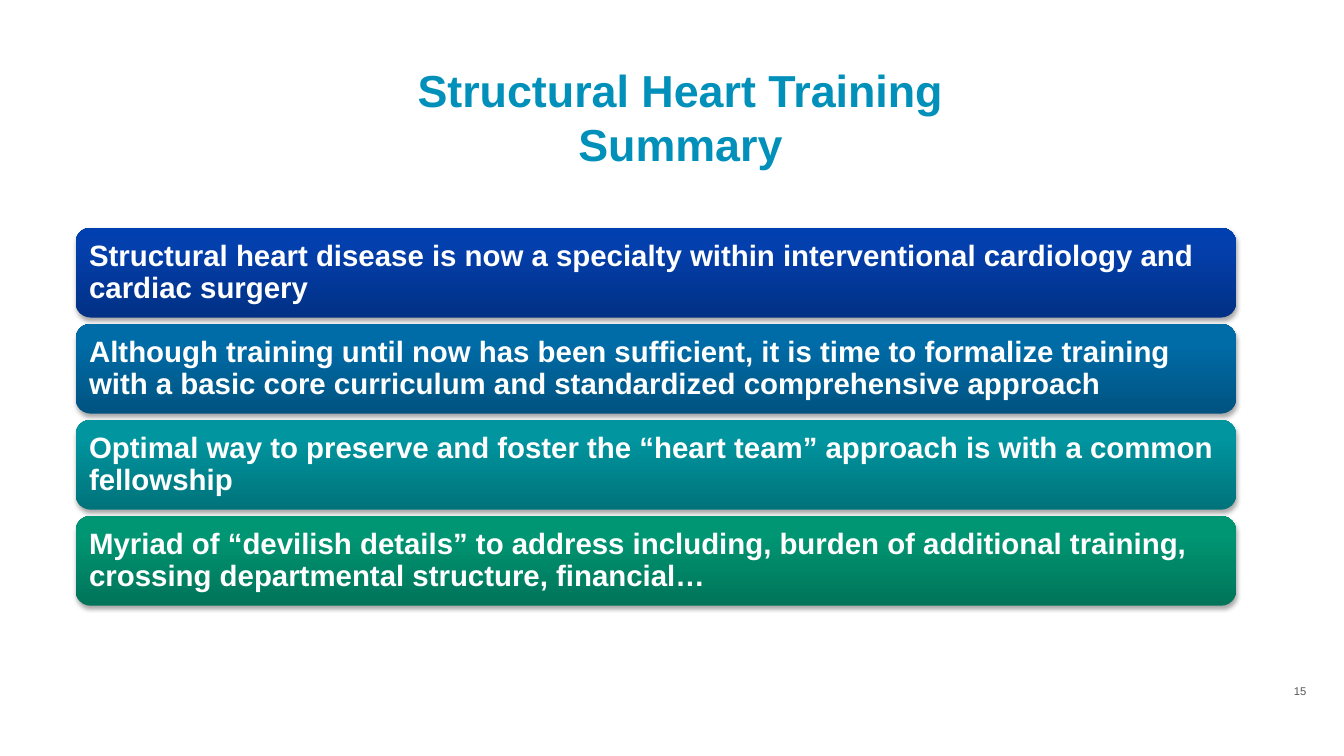
from copy import deepcopy
from dataclasses import dataclass

from lxml.etree import SubElement
from pptx import Presentation
from pptx.dml.color import RGBColor
from pptx.enum.shapes import MSO_SHAPE
from pptx.enum.text import MSO_ANCHOR, PP_ALIGN
from pptx.oxml.ns import qn
from pptx.util import Inches, Pt

TITLE = "Structural Heart Training\vSummary"
PAGE_NUMBER = "15"
POINTS = [
    ("Structural heart disease is now a specialty within interventional "
     "cardiology and cardiac surgery", ("023185", "033FAD", "003FB0")),
    ("Although training until now has been sufficient, it is time to formalize "
     "training with a basic core curriculum and standardized comprehensive "
     "approach", ("005381", "006CA7", "006DA8")),
    ("Optimal way to preserve and foster the “heart team” approach is with a "
     "common fellowship", ("00737A", "00959F", "00969F")),
    ("Myriad of “devilish details” to address including, burden of additional "
     "training, crossing departmental structure, financial…",
     ("007459", "009673", "009774")),
]


@dataclass(frozen=True)
class Theme:
    font: str = "Arial"
    title: str = "0090BA"
    bar_text: str = "FFFFFF"
    number: str = "555555"
    shadow: str = "000000"
    title_size: float = 32
    bar_size: float = 21
    number_size: float = 8
    stops: tuple = (0, 0.8, 1)


THEME = Theme()
BAR_LEFT, BAR_TOP, BAR_WIDTH, BAR_HEIGHT = 0.75, 2.26, 11.51, 0.89
BAR_PITCH = 0.953


def write(sp, text, size, color, align, anchor, insets, bold=True):
    tf = sp.text_frame
    tf.word_wrap = True
    tf.vertical_anchor = anchor
    side, edge = insets
    tf.margin_left = tf.margin_right = Inches(side)
    tf.margin_top = tf.margin_bottom = Inches(edge)
    p = tf.paragraphs[0]
    p.text = text
    p.alignment = align
    p.font.name = THEME.font
    p.font.size = Pt(size)
    p.font.bold = bold
    p.font.color.rgb = RGBColor.from_string(color)
    return p


def shade(sp, colors):
    fill = sp.fill
    fill.gradient()
    fill.gradient_angle = 90
    gs_list = sp._element.spPr.find(qn("a:gradFill")).find(qn("a:gsLst"))
    gs_list.append(deepcopy(gs_list[-1]))
    for stop, position, color in zip(fill.gradient_stops, THEME.stops, colors):
        stop.position = position
        stop.color.rgb = RGBColor.from_string(color)


def drop_shadow(sp):
    sp.shadow.inherit = False
    effects = sp._element.spPr.find(qn("a:effectLst"))
    shadow = SubElement(effects, qn("a:outerShdw"), blurRad=str(Pt(3.1)),
                        dist=str(Pt(1.8)), dir="5400000", rotWithShape="0")
    color = SubElement(shadow, qn("a:srgbClr"), val=THEME.shadow)
    SubElement(color, qn("a:alpha"), val="35000")


def add_bar(slide, index, text, colors):
    sp = slide.shapes.add_shape(
        MSO_SHAPE.ROUNDED_RECTANGLE, Inches(BAR_LEFT),
        Inches(BAR_TOP + index * BAR_PITCH), Inches(BAR_WIDTH), Inches(BAR_HEIGHT))
    shade(sp, colors)
    sp.line.fill.background()
    drop_shadow(sp)
    p = write(sp, text, THEME.bar_size, THEME.bar_text, PP_ALIGN.LEFT,
              MSO_ANCHOR.MIDDLE, (0.09, 0.09))
    p.line_spacing = 0.9


def main():
    prs = Presentation()
    prs.slide_width, prs.slide_height = Inches(13.33), Inches(7.5)
    slide = prs.slides.add_slide(prs.slide_layouts[6])

    for index, (text, colors) in enumerate(POINTS):
        add_bar(slide, index, text, colors)

    title = slide.shapes.add_textbox(Inches(1), Inches(0.52), Inches(11.5), Inches(0.67))
    write(title, TITLE, THEME.title_size, THEME.title, PP_ALIGN.CENTER,
          MSO_ANCHOR.TOP, (0.1, 0.1))

    number = slide.shapes.add_textbox(Inches(12.76), Inches(6.79), Inches(0.27), Inches(0.13))
    write(number, PAGE_NUMBER, THEME.number_size, THEME.number, PP_ALIGN.CENTER,
          MSO_ANCHOR.MIDDLE, (0, 0), bold=False)

    prs.save("out.pptx")


if __name__ == "__main__":
    main()
